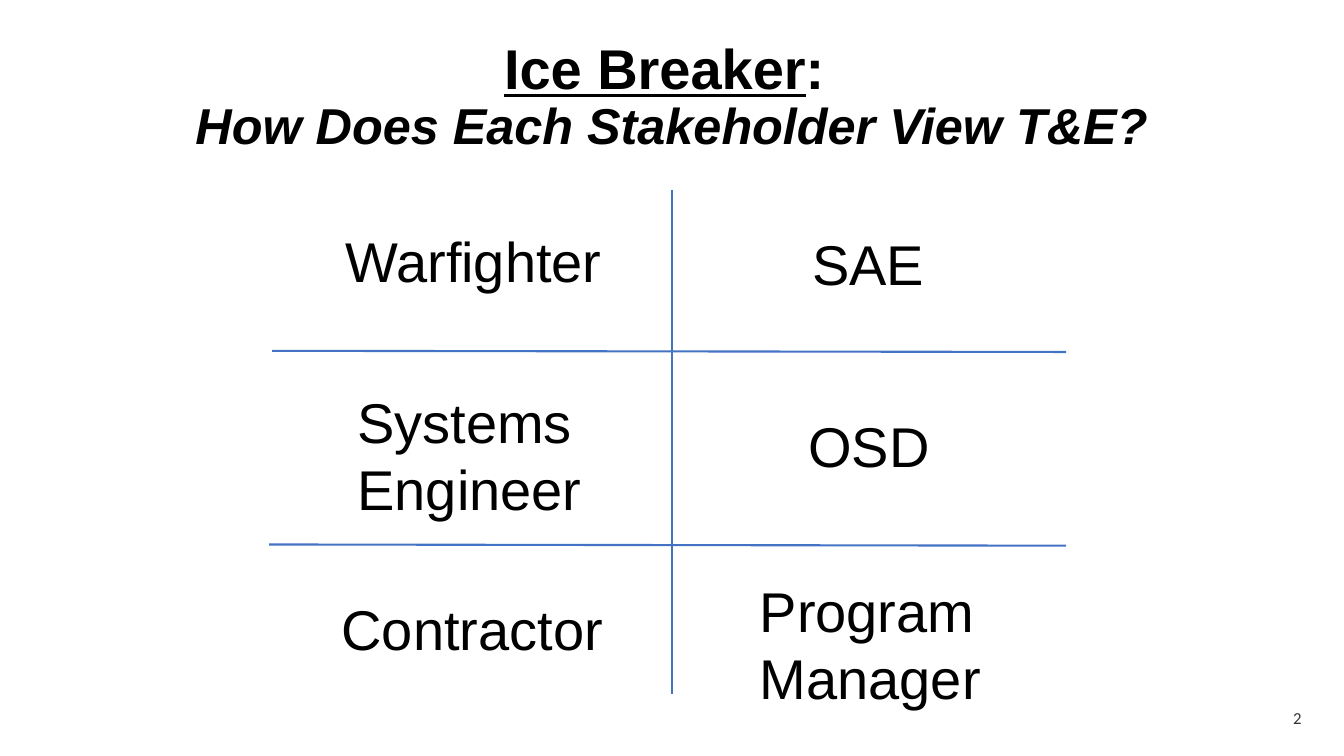
from pptx import Presentation
from pptx.dml.color import RGBColor
from pptx.enum.shapes import MSO_CONNECTOR
from pptx.enum.text import MSO_ANCHOR, PP_ALIGN
from pptx.oxml.ns import qn
from pptx.util import Cm, Pt
from lxml import etree

STRAIGHT = MSO_CONNECTOR.STRAIGHT
TOP, MIDDLE = MSO_ANCHOR.TOP, MSO_ANCHOR.MIDDLE
LEFT, CENTER, RIGHT = PP_ALIGN.LEFT, PP_ALIGN.CENTER, PP_ALIGN.RIGHT
COLORS = {"text": "000000", "number": "333333", "grid": "4472C4"}


class StakeholderSlide:
    def __init__(self, slide):
        self.slide = slide

    def add_box(self, left, top, width, height, anchor):
        box = self.slide.shapes.add_textbox(Cm(left), Cm(top), Cm(width), Cm(height))
        box.text_frame.word_wrap = True
        box.text_frame.vertical_anchor = anchor
        return box.text_frame

    def style_run(self, run, size, font="Arial", color="text"):
        run.font.name = font
        run.font.size = Pt(size)
        run.font.color.rgb = RGBColor.from_string(COLORS[color])

    def add_title(self, heading, question):
        frame = self.add_box(2.33, 0.64, 29.21, 3.68, MIDDLE)
        paragraph = frame.paragraphs[0]
        paragraph.alignment = CENTER
        paragraph.line_spacing = 0.9
        for text, size, underline, italic in (
            (heading, 40, True, False),
            (": ", 40, False, False),
            (question, 36, False, True),
        ):
            if text == question:
                paragraph.add_line_break()
            run = paragraph.add_run()
            run.text = text
            self.style_run(run, size)
            run.font.bold = True
            run.font.underline = underline
            run.font.italic = italic

    def add_label(self, text, left, top, width, height, line_spacing=1.0):
        frame = self.add_box(left, top, width, height, TOP)
        frame.text = text
        paragraph = frame.paragraphs[0]
        paragraph.alignment = LEFT
        paragraph.line_spacing = line_spacing
        self.style_run(paragraph.runs[0], 40)

    def add_page_number(self, number):
        frame = self.add_box(25.43, 17.58, 7.62, 1.02, MIDDLE)
        frame.text = number
        paragraph = frame.paragraphs[0]
        paragraph.alignment = RIGHT
        self.style_run(paragraph.runs[0], 12, "Calibri", "number")

    def add_grid_line(self, start_x, start_y, end_x, end_y):
        line = self.slide.shapes.add_connector(
            STRAIGHT, Cm(start_x), Cm(start_y), Cm(end_x), Cm(end_y)
        )
        line.line.color.rgb = RGBColor.from_string(COLORS["grid"])
        line.line.width = Pt(1.5)
        etree.SubElement(line._element.spPr, qn("a:effectLst"))


def main():
    presentation = Presentation()
    presentation.slide_width, presentation.slide_height = Cm(33.87), Cm(19.05)
    page = StakeholderSlide(presentation.slides.add_slide(presentation.slide_layouts[6]))

    page.add_title("Ice Breaker", "How Does Each Stakeholder View T&E?")

    one_line, two_lines = 2.1, 3.6
    page.add_label("Warfighter", 8.46, 5.78, 7.42, one_line, 0.9)
    for text, left, top, width, height in (
        ("Systems Engineer", 8.76, 9.63, 6.25, two_lines),
        ("Contractor", 8.36, 14.86, 7.42, one_line),
        ("SAE", 20.22, 5.66, 3.71, one_line),
        ("OSD", 20.12, 10.24, 3.71, one_line),
        ("Program Manager", 18.9, 14.4, 6.12, two_lines),
    ):
        page.add_label(text, left, top, width, height)

    page.add_grid_line(6.86, 8.84, 26.87, 8.87)
    page.add_grid_line(6.78, 13.72, 26.87, 13.75)
    page.add_grid_line(16.94, 4.78, 16.94, 17.48)
    page.add_page_number("2")

    presentation.save("out.pptx")


if __name__ == "__main__":
    main()
